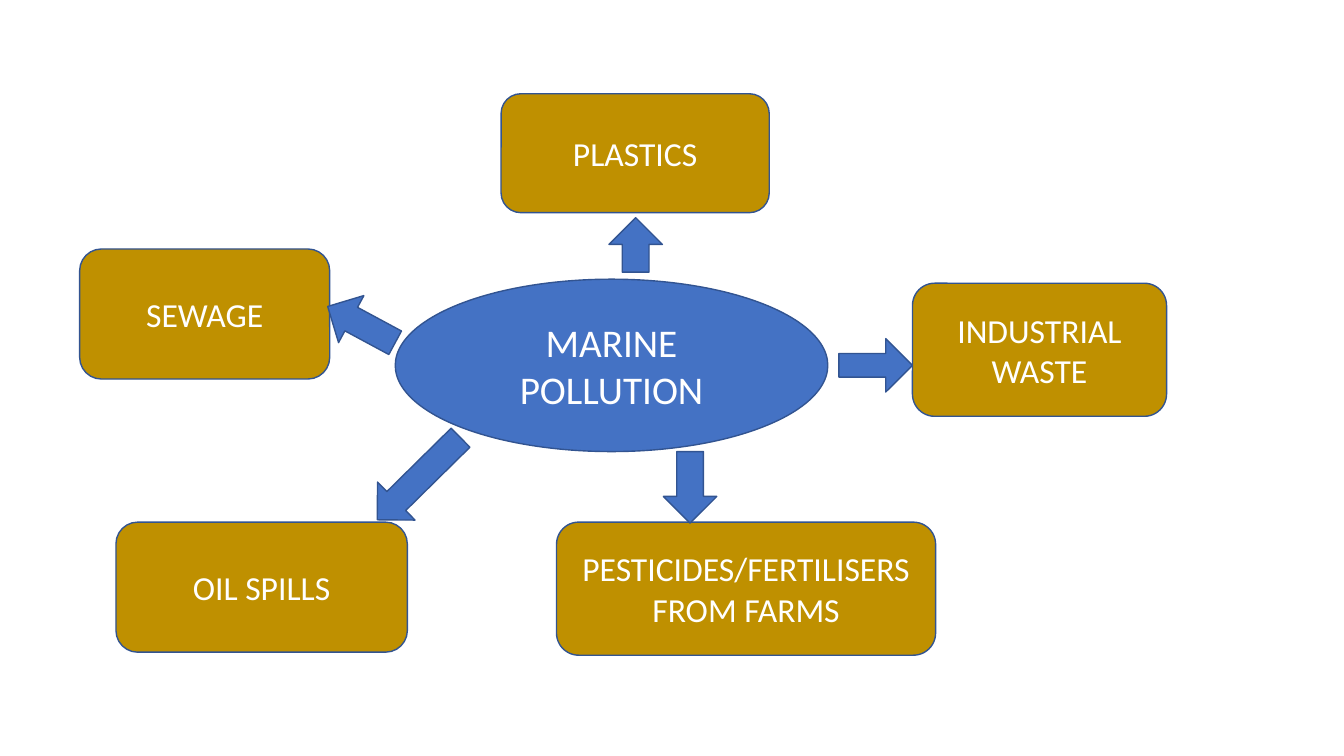
from pptx import Presentation
from pptx.dml.color import RGBColor
from pptx.enum import shapes, text
from pptx.util import Inches, Pt

KIND = shapes.MSO_SHAPE
BLUE = RGBColor(0x44, 0x72, 0xC4)
GOLD = RGBColor(0xBF, 0x90, 0x00)
EDGE = RGBColor(0x32, 0x54, 0x91)
WHITE = RGBColor(0xFF, 0xFF, 0xFF)

TOPIC = ("MARINE POLLUTION", (3.92, 2.77, 4.29, 1.71))
CAUSES = [
    ("PLASTICS", (4.97, 0.93, 2.66, 1.18)),
    ("INDUSTRIAL WASTE", (9.05, 2.81, 2.52, 1.32)),
    ("PESTICIDES/FERTILISERS FROM FARMS", (5.52, 5.18, 3.76, 1.32)),
    ("OIL SPILLS", (1.15, 5.18, 2.89, 1.29)),
    ("SEWAGE", (0.79, 2.47, 2.48, 1.29)),
]
# kind, frame, turn in degrees, shaft share of the width
ARROWS = [
    (KIND.DOWN_ARROW, (6.58, 4.48, 0.53, 0.71), 0, 0.5),
    (KIND.RIGHT_ARROW, (8.32, 3.36, 0.73, 0.53), 0, 0.44),
    (KIND.UP_ARROW, (6.04, 2.16, 0.53, 0.54), 0, 0.5),
    (KIND.UP_ARROW, (3.32, 2.84, 0.53, 0.76), 298.3, 0.5),
    (KIND.DOWN_ARROW, (3.89, 4.17, 0.53, 1.16), 45.4, 0.5),
]


def add_shape(slide, kind, frame, fill):
    shape = slide.shapes.add_shape(kind, *map(Inches, frame))
    shape.shadow.inherit = False
    shape.fill.solid()
    shape.fill.fore_color.rgb = fill
    shape.line.color.rgb = EDGE
    shape.line.width = Pt(1)
    return shape


def add_label(shape, words, size):
    frame = shape.text_frame
    frame.text = words
    frame.word_wrap = True
    frame.vertical_anchor = text.MSO_ANCHOR.MIDDLE
    para = frame.paragraphs[0]
    para.alignment = text.PP_ALIGN.CENTER
    font = para.runs[0].font
    font.name = "Calibri"
    font.size = Pt(size)
    font.color.rgb = WHITE


def main():
    deck = Presentation()
    deck.slide_width, deck.slide_height = Inches(13.33), Inches(7.5)
    slide = deck.slides.add_slide(deck.slide_layouts[6])

    words, frame = TOPIC
    add_label(add_shape(slide, KIND.OVAL, frame, BLUE), words, 28)
    for words, frame in CAUSES:
        box = add_shape(slide, KIND.ROUNDED_RECTANGLE, frame, GOLD)
        add_label(box, words, 24)
    for kind, frame, turn, shaft in ARROWS:
        arrow = add_shape(slide, kind, frame, BLUE)
        arrow.rotation = turn
        arrow.adjustments[0] = shaft

    deck.save("out.pptx")


if __name__ == "__main__":
    main()
